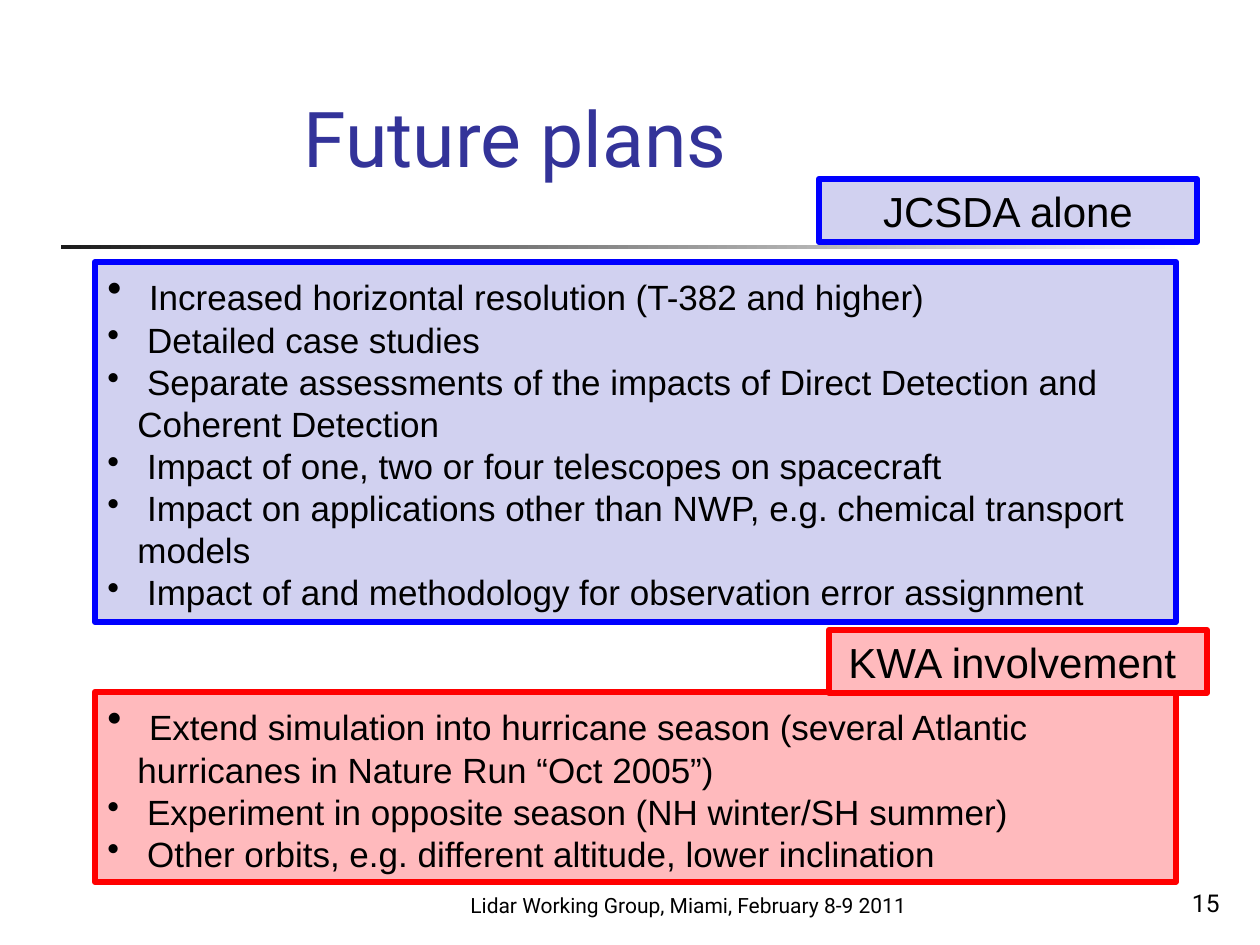
"""Build the "Future plans" slide with two framed lists and their labels."""
import pptx
import pptx.dml.color
import pptx.enum.shapes
import pptx.enum.text
import pptx.util
from lxml import etree

SCALE = 914400 / 126
ALIGN = pptx.enum.text.PP_ALIGN
ANCHOR = pptx.enum.text.MSO_ANCHOR
RECTANGLE = pptx.enum.shapes.MSO_SHAPE.RECTANGLE
BLUE = ("D1D1F0", "0000FF")
RED = ("FFBABD", "FF0000")


def rgb(value):
    return pptx.dml.color.RGBColor.from_string(value)


def add_text(text, place, size, font="Arial", color="000000", align=ALIGN.LEFT,
             anchor=ANCHOR.TOP, frame=None, bullets=False):
    place = [round(length * SCALE) for length in place]
    if frame:
        box = page.shapes.add_shape(RECTANGLE, *place)
        box.shadow.inherit = False
        box.fill.solid()
        box.fill.fore_color.rgb = rgb(frame[0])
        box.line.color.rgb = rgb(frame[1])
        box.line.width = pptx.util.Pt(3.5)
    else:
        box = page.shapes.add_textbox(*place)
    box.text_frame.word_wrap = True
    box.text_frame.vertical_anchor = anchor
    for index, line in enumerate(text.split("\n")):
        para = box.text_frame.paragraphs[0] if index == 0 else box.text_frame.add_paragraph()
        para.alignment = align
        pieces = [(line, size)]
        if bullets:
            props = para._p.get_or_add_pPr()
            props.set("marL", str(round(30 * SCALE)))
            props.set("indent", str(round(-30 * SCALE)))
            bullet = etree.SubElement(props, pptx.oxml.ns.qn("a:buChar"))
            bullet.set("char", "•")
            pieces = [(" ", 24 if index == 0 else size), (line, size)]
        for piece, points in pieces:
            span = para.add_run()
            span.text = piece
            span.font.name = font
            span.font.size = pptx.util.Pt(points)
            span.font.color.rgb = rgb(color)


deck = pptx.Presentation()
deck.slide_width = round(1260 * SCALE)
deck.slide_height = round(945 * SCALE)
page = deck.slides.add_slide(deck.slide_layouts[6])

rule = page.shapes.add_shape(RECTANGLE, *[round(length * SCALE) for length in (61, 245, 1134, 4)])
rule.shadow.inherit = False
rule.line.fill.background()
rule.fill.gradient()
rule.fill.gradient_angle = 0
for stop, position, color in zip(rule.fill.gradient_stops, (0, 1), ("1C1C1C", "FFFFFF")):
    stop.position = position
    stop.color.rgb = rgb(color)

add_text("Future plans", (291, -13, 1032, 202), 44, font="Roboto", color="333399",
         anchor=ANCHOR.BOTTOM)
add_text("Lidar Working Group, Miami, February 8-9 2011", (410, 861, 557, 63), 12,
         font="Roboto", align=ALIGN.CENTER, anchor=ANCHOR.BOTTOM)
add_text("15", (970, 861, 262, 63), 14, font="Roboto", align=ALIGN.RIGHT, anchor=ANCHOR.BOTTOM)

add_text("JCSDA alone", (819, 179, 378, 63), 24, align=ALIGN.CENTER, frame=BLUE)
add_text("""Increased horizontal resolution (T-382 and higher)
Detailed case studies
Separate assessments of the impacts of Direct Detection and Coherent Detection
Impact of one, two or four telescopes on spacecraft
Impact on applications other than NWP, e.g. chemical transport models
Impact of and methodology for observation error assignment""",
         (95, 262, 1081, 360), 20, frame=BLUE, bullets=True)
add_text("""Extend simulation into hurricane season (several Atlantic hurricanes in Nature Run “Oct 2005”)
Experiment in opposite season (NH winter/SH summer)
Other orbits, e.g. different altitude, lower inclination""",
         (95, 692, 1081, 190), 20, frame=RED, bullets=True)
add_text("KWA involvement ", (829, 630, 378, 63), 24, align=ALIGN.CENTER, frame=RED)

deck.save("out.pptx")
